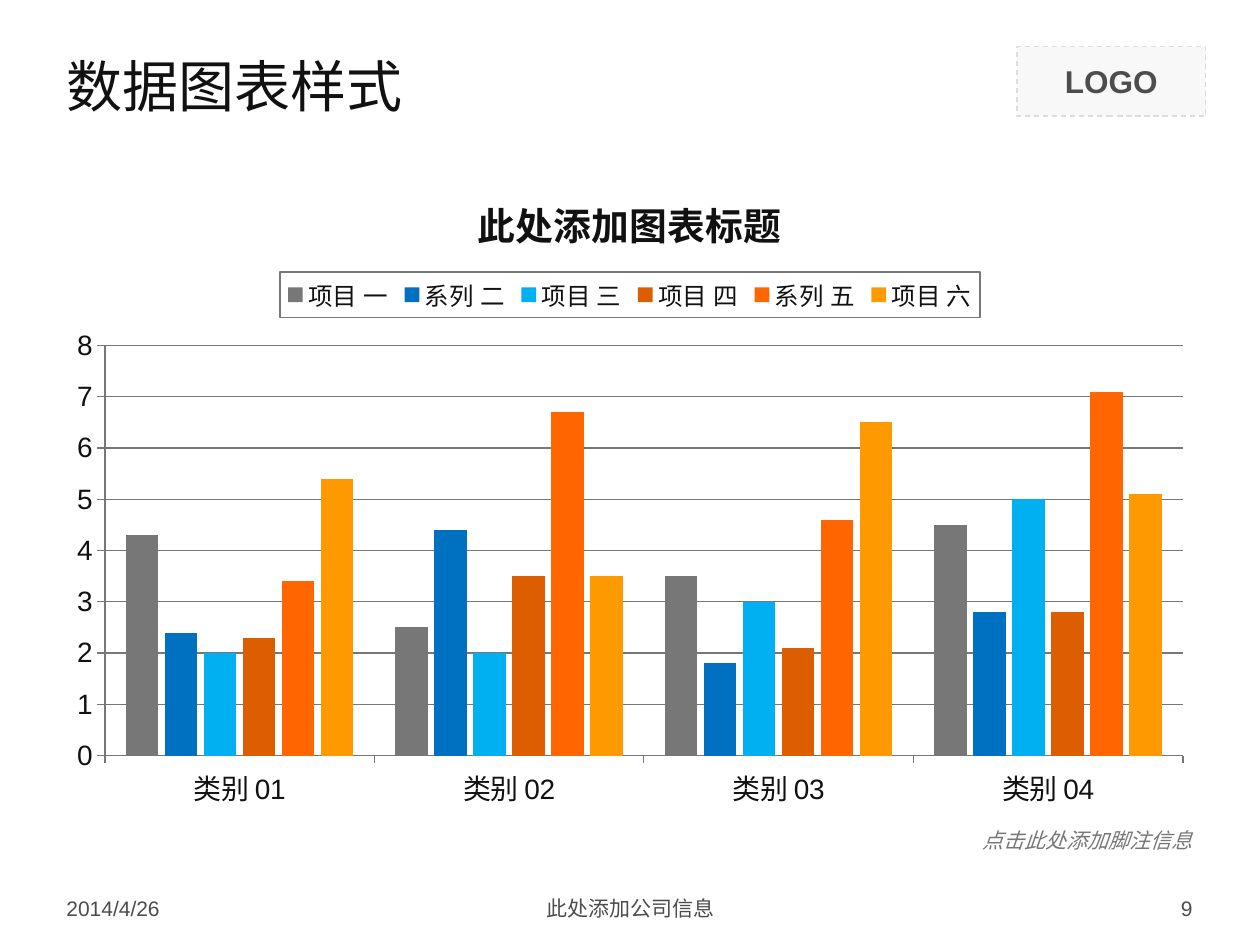
"""Build a slide with a clustered column chart, a title, a logo slot and footers."""
from dataclasses import dataclass

from lxml.etree import SubElement
from pptx import Presentation
from pptx.chart.chart import Chart
from pptx.chart.data import CategoryChartData
from pptx.dml.color import RGBColor
from pptx.enum.chart import XL_CHART_TYPE, XL_LEGEND_POSITION, XL_TICK_MARK
from pptx.enum.dml import MSO_LINE
from pptx.enum.shapes import MSO_SHAPE
from pptx.enum.text import MSO_ANCHOR, MSO_AUTO_SIZE, PP_ALIGN
from pptx.oxml.ns import qn
from pptx.slide import Slide
from pptx.text.text import Font, TextFrame
from pptx.util import Cm, Pt

COLORS = {
    "ink": "111111",
    "grey": "777777",
    "footer": "4C4C4C",
    "logo_text": "4D4D4D",
    "logo_fill": "F8F8F8",
    "logo_line": "DDDDDD",
    "blue": "0070C0",
    "sky": "00B0F0",
    "rust": "DC5E01",
    "orange": "FF6600",
    "amber": "FF9900",
}
LEFT, WIDTH = 1.09, 23.22
FOOTER_TOP, FOOTER_HEIGHT = 17.93, 0.74


@dataclass(frozen=True)
class Series:
    name: str
    values: tuple[float, ...]
    color: str


@dataclass(frozen=True)
class Label:
    text: str
    left: float
    top: float
    width: float
    height: float
    align: PP_ALIGN
    color: str = "footer"
    italic: bool = False
    wrap: bool = True


CATEGORIES = ("类别 01", "类别 02", "类别 03", "类别 04")
SERIES = (
    Series("项目 一", (4.3, 2.5, 3.5, 4.5), "grey"),
    Series("系列 二", (2.4, 4.4, 1.8, 2.8), "blue"),
    Series("项目 三", (2, 2, 3, 5), "sky"),
    Series("项目 四", (2.3, 3.5, 2.1, 2.8), "rust"),
    Series("系列 五", (3.4, 6.7, 4.6, 7.1), "orange"),
    Series("项目 六", (5.4, 3.5, 6.5, 5.1), "amber"),
)
LABELS = (
    Label("2014/4/26", LEFT, FOOTER_TOP, 5.92, FOOTER_HEIGHT, PP_ALIGN.LEFT),
    Label("此处添加公司信息", 8.69, FOOTER_TOP, 8.05, FOOTER_HEIGHT, PP_ALIGN.CENTER),
    Label("9", 18.37, FOOTER_TOP, 5.92, FOOTER_HEIGHT, PP_ALIGN.RIGHT),
    Label("点击此处添加脚注信息", 19.51, 16.56, 4.78, 0.76, PP_ALIGN.RIGHT,
          "grey", italic=True, wrap=False),
)


def rgb(name: str) -> RGBColor:
    return RGBColor.from_string(COLORS[name])


def style_font(font: Font, size: float, color: str, name: str = "Arial",
               bold: bool = False, italic: bool = False) -> None:
    font.name, font.size = name, Pt(size)
    font.bold, font.italic = bold, italic
    font.color.rgb = rgb(color)


def write(frame: TextFrame, text: str, align: PP_ALIGN) -> Font:
    frame.vertical_anchor = MSO_ANCHOR.MIDDLE
    para = frame.paragraphs[0]
    para.alignment = align
    span = para.add_run()
    span.text = text
    return span.font


def add_title(page: Slide) -> None:
    title = page.shapes.title
    title.left, title.top = Cm(LEFT), Cm(0.71)
    title.width, title.height = Cm(WIDTH), Cm(2.01)
    title.text_frame.auto_size = MSO_AUTO_SIZE.NONE
    font = write(title.text_frame, "数据图表样式", PP_ALIGN.LEFT)
    style_font(font, 32, "ink", "Montserrat")


def add_logo_slot(page: Slide) -> None:
    box = page.shapes.add_shape(MSO_SHAPE.RECTANGLE, Cm(20.5), Cm(0.94), Cm(3.81), Cm(1.4))
    box.shadow.inherit = False
    box.fill.solid()
    box.fill.fore_color.rgb = rgb("logo_fill")
    box.line.color.rgb = rgb("logo_line")
    box.line.width = Pt(0.75)
    box.line.dash_style = MSO_LINE.DASH
    style_font(write(box.text_frame, "LOGO", PP_ALIGN.CENTER), 18, "logo_text", bold=True)


def add_label(page: Slide, label: Label) -> None:
    box = page.shapes.add_textbox(
        Cm(label.left), Cm(label.top), Cm(label.width), Cm(label.height))
    box.text_frame.word_wrap = label.wrap
    font = write(box.text_frame, label.text, label.align)
    style_font(font, 12, label.color, italic=label.italic)


def add_legend(chart: Chart) -> None:
    chart.has_legend = True
    legend = chart.legend
    legend.position = XL_LEGEND_POSITION.TOP
    legend.include_in_layout = False
    style_font(legend.font, 14, "ink")
    frame = SubElement(legend._element, qn("c:spPr"))
    line = SubElement(frame, qn("a:ln"), w=str(Pt(0.75)))
    fill = SubElement(line, qn("a:solidFill"))
    SubElement(fill, qn("a:srgbClr"), val=COLORS["grey"])
    legend._element.find(qn("c:txPr")).addprevious(frame)


def add_column_chart(page: Slide) -> None:
    data = CategoryChartData()
    data.categories = CATEGORIES
    for series in SERIES:
        data.add_series(series.name, series.values)
    chart = page.shapes.add_chart(
        XL_CHART_TYPE.COLUMN_CLUSTERED, Cm(LEFT), Cm(3.33), Cm(WIDTH), Cm(13.21), data).chart
    style_font(chart.font, 18, "ink")

    chart.has_title = True
    span = chart.chart_title.text_frame.paragraphs[0].add_run()
    span.text = "此处添加图表标题"
    style_font(span.font, 21.6, "ink", bold=True)
    chart.chart_title.include_in_layout = False
    add_legend(chart)

    plot = chart.plots[0]
    plot.gap_width, plot.overlap = 130, -20
    plot.vary_by_categories = False
    for column, series in zip(plot.series, SERIES):
        column.format.fill.solid()
        column.format.fill.fore_color.rgb = rgb(series.color)

    values = chart.value_axis
    values.has_major_gridlines = True
    values.minimum_scale, values.maximum_scale, values.major_unit = 0, 8, 1
    for axis in (chart.category_axis, values):
        axis.major_tick_mark = XL_TICK_MARK.OUTSIDE
        style_font(axis.tick_labels.font, 16, "ink")
    for part in (chart.category_axis, values, values.major_gridlines):
        part.format.line.color.rgb = rgb("grey")
        part.format.line.width = Pt(0.75)


def main() -> None:
    deck = Presentation()
    deck.slide_width, deck.slide_height = Cm(25.4), Cm(19.05)
    page = deck.slides.add_slide(deck.slide_layouts[5])
    add_title(page)
    add_logo_slot(page)
    add_column_chart(page)
    for label in LABELS:
        add_label(page, label)
    deck.save("out.pptx")


if __name__ == "__main__":
    main()
